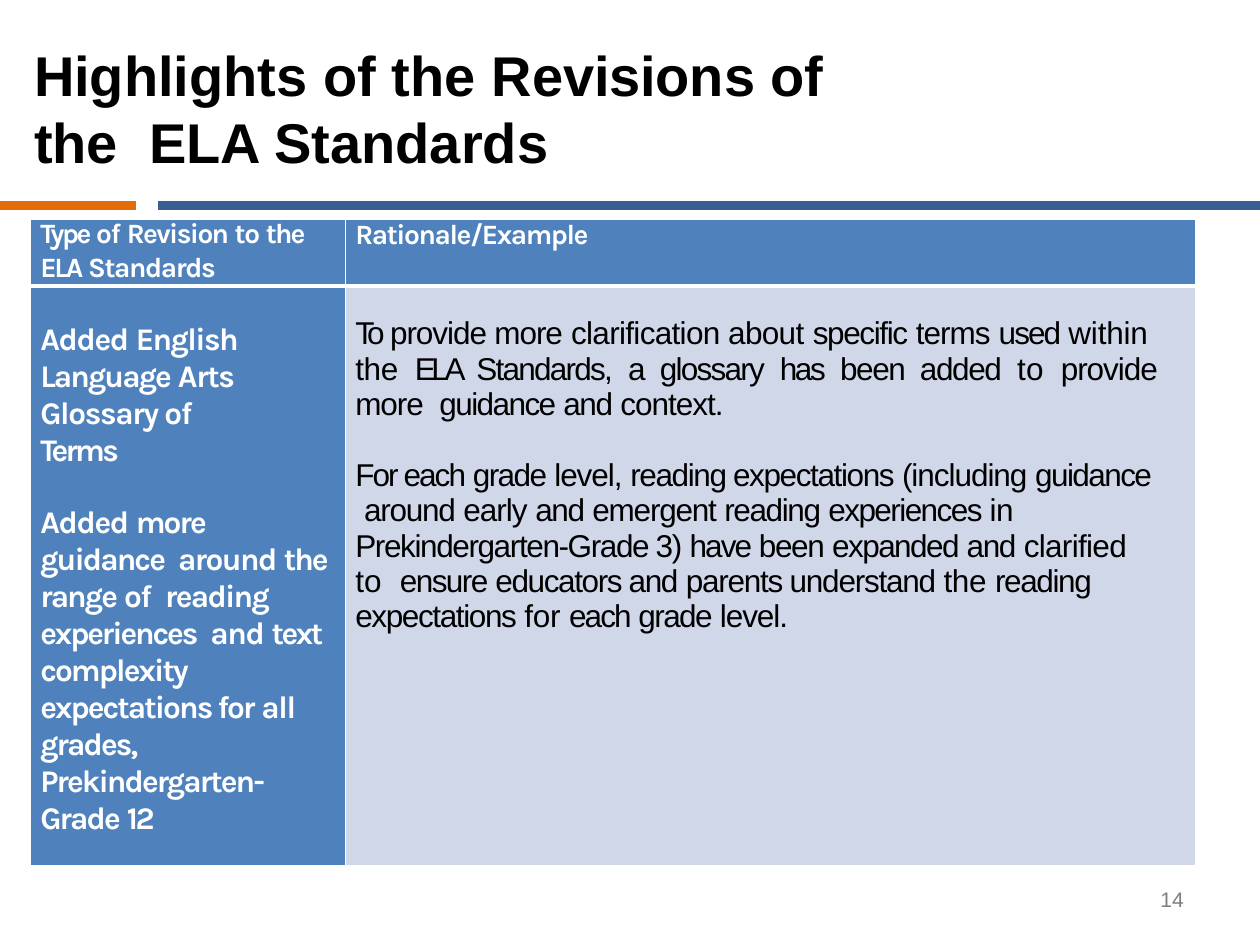
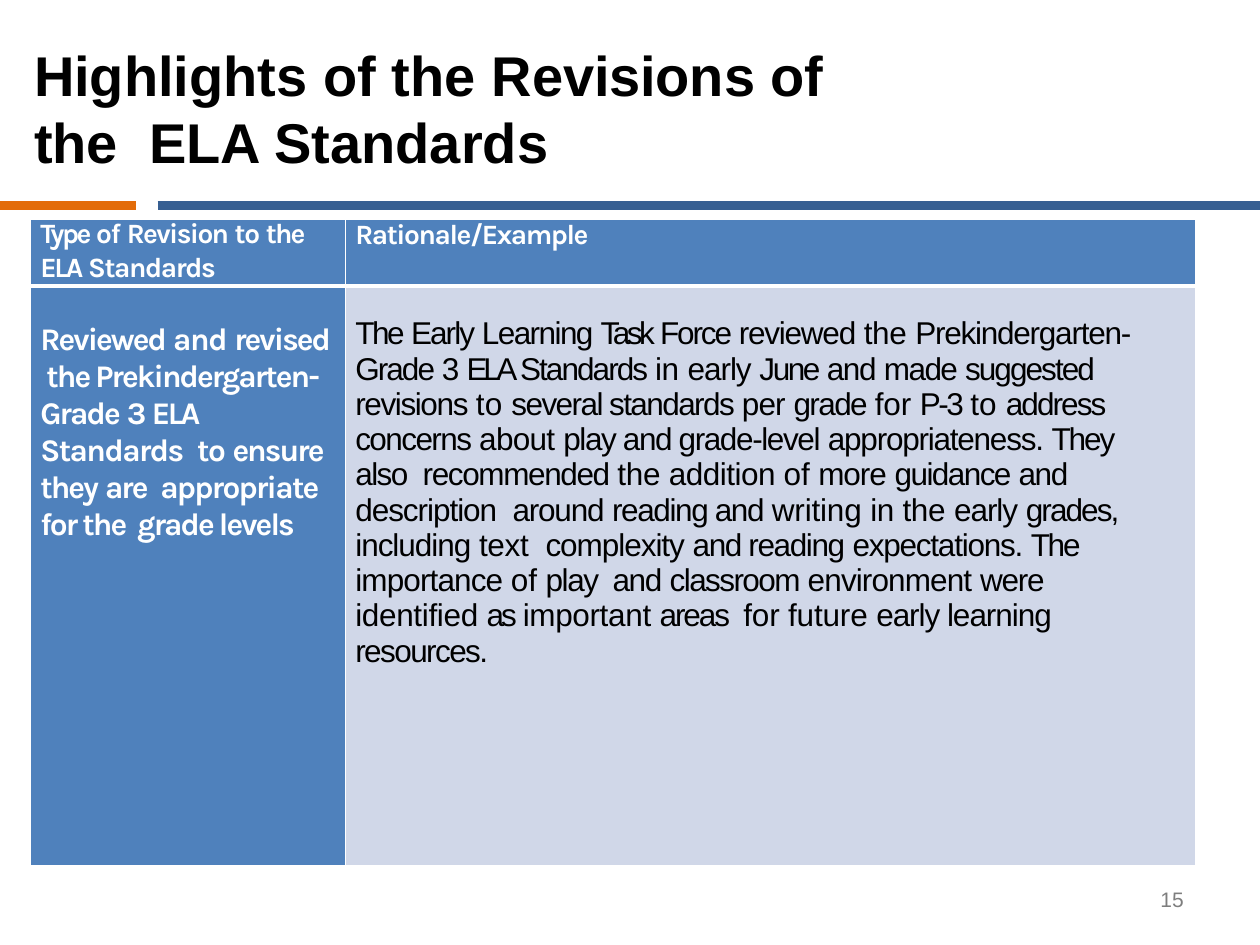
from dataclasses import dataclass

from lxml.etree import SubElement
from pptx import Presentation
from pptx.dml.color import RGBColor
from pptx.enum.text import PP_ALIGN
from pptx.oxml.ns import qn
from pptx.util import Inches, Pt


@dataclass(frozen=True)
class Theme:
    """Colours, fonts and type sizes shared by the slides."""

    ink: str = "000000"
    white: str = "FFFFFF"
    grey: str = "7E7E7E"
    navy: str = "375F92"
    orange: str = "E36C09"
    blue: str = "4F81BC"
    pale: str = "D0D7E8"
    sans: str = "Arial"
    label: str = "Karla"
    title_size: float = 32
    body_size: float = 18
    header_size: float = 16
    number_size: float = 12
    band_width: float = 5.28


@dataclass(frozen=True)
class Style:
    """The look of a run of text."""

    font: str
    size: float
    color: str
    bold: bool = False


@dataclass(frozen=True)
class Block:
    """One paragraph: (text, letter spacing) runs and its layout."""

    runs: list
    line: object = None
    before: float = 0
    right: float = 0.01
    justify: bool = False


THEME = Theme()
TITLE = Style(THEME.sans, THEME.title_size, THEME.ink, True)
HEADER = Style(THEME.label, THEME.header_size, THEME.white, True)
LABEL = Style(THEME.label, THEME.body_size, THEME.white, True)
BODY = Style(THEME.sans, THEME.body_size, THEME.ink)
NUMBER = Style(THEME.sans, THEME.number_size, THEME.grey)

TITLE_TEXT = [Block([("Highlights of the ", 0), ("Revisions ", -0.1),
                     ("of the  ELA Standards", 0)])]
TYPE_HEADER = [
    Block([("Type ", -1.4), ("of ", -0.7), ("Revision ", -0.9), ("to ", -0.8),
           ("the", -1)], line=Pt(18.2)),
    Block([("ELA ", -1.3), ("Standards", -0.8)], line=Pt(19.1)),
]
RATIONALE_HEADER = [Block([("Rationale/Example", -0.8)], line=Pt(18.4))]

GLOSSARY_TYPES = [
    Block([("Added ", -0.8), ("English  ", -0.9), ("Language ", -1.1),
           ("Arts  Glossary of ", -0.8), ("Terms", -1.6)], right=0.7),
    Block([("Added ", -0.8), ("more guidance  ", -1.1), ("around ", -0.9),
           ("the range ", -1.1), ("of  ", -0.8), ("reading ", -1),
           ("experiences  ", -1.2), ("and ", -0.8), ("text ", -1.4),
           ("complexity  expectations for ", -1.1), ("all  ", -0.8),
           ("grades,  Prekindergarten-  Grade ", -1.1), ("12", -1.4)],
          before=20.5, right=0.1),
]
GLOSSARY_RATIONALE = [
    Block([("To ", -2.2), ("provide more ", -0.6),
           ("clarification about ", -0.4), ("specific ", -0.8),
           ("terms ", -0.6), ("used ", -1.1), ("within  ", -0.1),
           ("the ", -0.2), ("ELA ", -2.5), ("Standards, ", -1), ("a ", -1.4),
           ("glossary ", -1), ("has ", -1.4), ("been added ", -0.8),
           ("to ", 0.1), ("provide more  ", -0.6), ("guidance ", -0.9),
           ("and ", -0.8), ("context.", -0.6)], right=0.31, justify=True),
    Block([("For each ", -1.1), ("grade ", -0.9), ("level, ", -0.6),
           ("reading expectations ", -0.8), ("(including ", -0.6),
           ("guidance  ", -0.9), ("around ", -0.7), ("early ", -0.6),
           ("and ", -0.8), ("emergent ", -0.7), ("reading ", -0.8),
           ("experiences ", -0.9), ("in  ", -0.2),
           ("Prekindergarten-Grade 3) ", -0.8), ("have ", -1.1),
           ("been ", -0.8), ("expanded ", -0.9), ("and ", -0.8),
           ("clarified ", -0.4), ("to  ", 0.1), ("ensure ", -0.9),
           ("educators and ", -0.8), ("parents understand ", -0.7),
           ("the ", -0.2), ("reading  expectations ", -0.8), ("for ", -0.1),
           ("each ", -1.1), ("grade ", -0.9), ("level.", -0.6)],
          before=20.5, right=0.32),
]
REVIEW_TYPES = [
    Block([("Reviewed ", -1.1), ("and ", -0.8),
           ("revised  the Prekindergarten-  Grade ", -1.1), ("3 ", -1.4),
           ("ELA ", -1.5), ("Standards  ", -0.9), ("to ", -0.8),
           ("ensure they ", -1.1), ("are  ", -1.2), ("appropriate ", -1),
           ("for the  grade levels", -1.1)], right=0.12),
]
REVIEW_RATIONALE = [
    Block([("The ", -1.4), ("Early ", -1.1), ("Learning ", -0.9),
           ("Task ", -2), ("Force ", -1.2), ("reviewed ", -0.7),
           ("the ", -0.2), ("Prekindergarten-  ", -0.7), ("Grade ", -1.1),
           ("3 ", -0.9), ("ELA ", -2.5), ("Standards ", -1.1), ("in ", -0.2),
           ("early ", -0.6), ("June ", -1.4), ("and ", -0.8), ("made ", -0.9),
           ("suggested  ", -1.1), ("revisions ", -0.8), ("to ", 0.1),
           ("several standards ", -0.9), ("per ", -0.5), ("grade ", -0.9),
           ("for ", -0.1), ("P-3 ", -1.4), ("to ", 0.1), ("address  ", -1.1),
           ("concerns ", -0.9), ("about ", -0.4),
           ("play and grade-level ", -0.8), ("appropriateness. ", -0.7),
           ("They ", -1.2), ("also  ", -0.9), ("recommended ", -0.8),
           ("the ", -0.2), ("addition ", -0.3), ("of ", -0.1),
           ("more ", -0.6), ("guidance ", -0.9), ("and ", -0.8),
           ("description  ", -0.6), ("around ", -0.7),
           ("reading and ", -0.8), ("writing ", -0.1), ("in the ", -0.2),
           ("early ", -0.6), ("grades, ", -1.1), ("including ", -0.6),
           ("text  ", -0.2), ("complexity ", -0.6), ("and reading ", -0.8),
           ("expectations. ", -0.7), ("The ", -1.3), ("importance ", -0.5),
           ("of ", -0.1), ("play  and ", -0.8), ("classroom ", -0.9),
           ("environment ", -0.5), ("were ", -0.7), ("identified ", -0.2),
           ("as ", -1.7), ("important ", -0.2), ("areas  ", -1.2),
           ("for future ", -0.1), ("early learning ", -0.6),
           ("resources.", -0.9)], right=0.32),
]


def write(frame, blocks, style):
    """Fill a text frame with styled paragraphs, run by run."""
    frame.word_wrap = True
    for index, block in enumerate(blocks):
        para = frame.add_paragraph() if index else frame.paragraphs[0]
        para.alignment = PP_ALIGN.JUSTIFY if block.justify else PP_ALIGN.LEFT
        if block.line:
            para.line_spacing = block.line
        if block.before:
            para.space_before = Pt(block.before)
        para._p.get_or_add_pPr().set("marR", str(Inches(block.right)))
        for text, spacing in block.runs:
            span = para.add_run()
            span.text = text
            span.font.name = style.font
            span.font.size = Pt(style.size)
            span.font.bold = style.bold
            span.font.color.rgb = RGBColor.from_string(style.color)
            span._r.get_or_add_rPr().set("spc", str(round(spacing * 100)))


def set_margins(holder, left=0, top=0, right=0, bottom=0):
    """Set the inner margins of a text frame or a cell, in inches."""
    holder.margin_left, holder.margin_top = Inches(left), Inches(top)
    holder.margin_right, holder.margin_bottom = Inches(right), Inches(bottom)


def add_text(page, box, blocks, style, **margins):
    """Add a text box at the given left, top, width and height."""
    frame = page.shapes.add_textbox(*map(Inches, box)).text_frame
    set_margins(frame, **margins)
    write(frame, blocks, style)


def add_band(page, left, right, top, color):
    """Draw one thick horizontal rule."""
    band = page.shapes.add_connector(
        1, Inches(left), Inches(top), Inches(right), Inches(top))
    band.line.color.rgb = RGBColor.from_string(color)
    band.line.width = Pt(THEME.band_width)
    SubElement(band._element.spPr, qn("a:effectLst"))


def set_borders(cell, **widths):
    """Give a cell white borders, by side and width in points."""
    properties = cell._tc.get_or_add_tcPr()
    for index, (side, width) in enumerate(widths.items()):
        line = SubElement(properties, qn(f"a:ln{side}"), w=str(Pt(width)))
        fill = SubElement(line, qn("a:solidFill"))
        SubElement(fill, qn("a:srgbClr"), val=THEME.white)
        properties.remove(line)
        properties.insert(index, line)


def add_revision_table(page, box, types, rationale):
    """Add the two-column table of revisions and their rationale."""
    left, top, width, height = box
    type_width, header_height = 2.5, 0.53
    table = page.shapes.add_table(2, 2, *map(Inches, box)).table
    table.first_row = table.horz_banding = False
    for column, size in zip(table.columns, (type_width, width - type_width)):
        column.width = Inches(size)
    for row, size in zip(table.rows, (header_height, height - header_height)):
        row.height = Inches(size)
    cells = [
        (0, 0, TYPE_HEADER, HEADER, THEME.blue, 0),
        (0, 1, RATIONALE_HEADER, HEADER, THEME.blue, 0),
        (1, 0, types, LABEL, THEME.blue, 0.28),
        (1, 1, rationale, BODY, THEME.pale, 0.24),
    ]
    for row, column, blocks, style, fill, above in cells:
        cell = table.cell(row, column)
        cell.fill.solid()
        cell.fill.fore_color.rgb = RGBColor.from_string(fill)
        set_margins(cell, left=0.08, top=above)
        set_borders(cell, L=1, R=1, T=3 if row else 1, B=1 if row else 3)
        write(cell.text_frame, blocks, style)


def add_revision_slide(deck, number, types, rationale):
    """Add one slide with title, bands, table and page number."""
    page = deck.slides.add_slide(deck.slide_layouts[6])
    add_band(page, 1.25, 10, 1.63, THEME.navy)
    add_band(page, 0, 1.08, 1.63, THEME.orange)
    add_text(page, (0.25, 0.3, 7.08, 1.1), TITLE_TEXT, TITLE,
             left=0.02, top=0.02, right=0.1)
    add_text(page, (9.19, 7.04, 0.24, 0.21),
             [Block([(str(number), 0)], line=Pt(14.3))], NUMBER, left=0.02)
    add_revision_table(page, (0.24, 1.74, 9.25, 5.13), types, rationale)


def main():
    """Build and save the deck."""
    deck = Presentation()
    deck.slide_width, deck.slide_height = Inches(10), Inches(7.5)
    add_revision_slide(deck, 14, GLOSSARY_TYPES, GLOSSARY_RATIONALE)
    add_revision_slide(deck, 15, REVIEW_TYPES, REVIEW_RATIONALE)
    deck.save("out.pptx")


if __name__ == "__main__":
    main()
